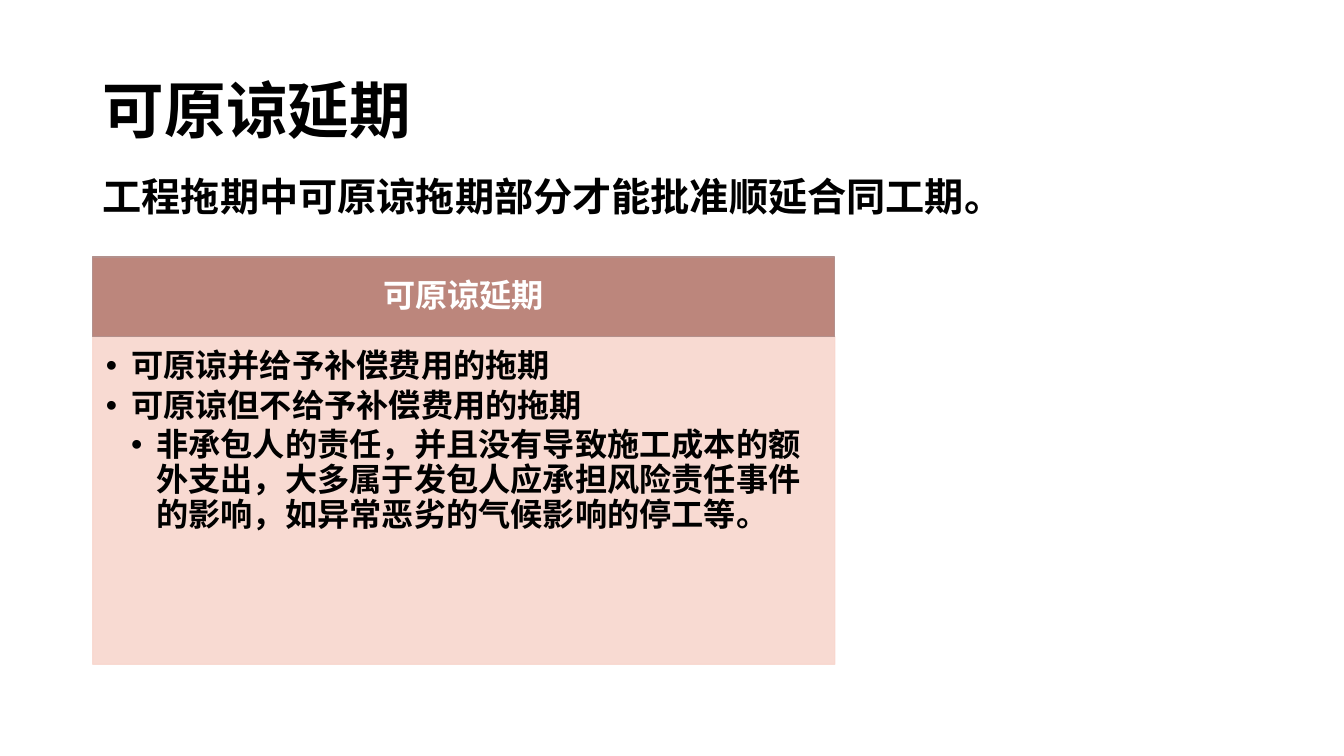
import dataclasses

import lxml.etree
import pptx
import pptx.dml.color
import pptx.enum.shapes
import pptx.enum.text
import pptx.oxml.ns
import pptx.util

Inches, Pt = pptx.util.Inches, pptx.util.Pt
ALIGN, ANCHOR = pptx.enum.text.PP_ALIGN, pptx.enum.text.MSO_ANCHOR
qn = pptx.oxml.ns.qn
LATIN, CJK = "Times New Roman", "Noto Sans CJK SC"
LEFT, PANEL_W = 0.92, 7.36
HEAD_TOP, HEAD_H, LIST_H = 2.55, 0.79, 3.25


@dataclasses.dataclass
class Item:
    text: str
    level: int


ITEMS = [
    Item("可原谅并给予补偿费用的拖期", 0),
    Item("可原谅但不给予补偿费用的拖期", 0),
    Item("非承包人的责任，并且没有导致施工成本的额外支出，大多属于发包人应承担风险责任事件的影响，"
         "如异常恶劣的气候影响的停工等。", 1),
]


def rgb(value: str) -> pptx.dml.color.RGBColor:
    return pptx.dml.color.RGBColor.from_string(value)


def place(sp, left: float, top: float, width: float, height: float) -> None:
    sp.left, sp.top = Inches(left), Inches(top)
    sp.width, sp.height = Inches(width), Inches(height)


def paint(sp, fill: str, line: str, alpha: int = 100) -> None:
    sp.fill.solid()
    sp.fill.fore_color.rgb = rgb(fill)
    sp.line.color.rgb = rgb(line)
    sp.line.width = Pt(1)
    if alpha < 100:
        for color in sp._element.spPr.iter(qn("a:srgbClr")):
            lxml.etree.SubElement(color, qn("a:alpha"), val=str(alpha * 1000))


def frame(sp, anchor, insets: tuple[float, ...], wrap: bool = True):
    tf = sp.text_frame
    tf.word_wrap = wrap
    tf.auto_size = pptx.enum.text.MSO_AUTO_SIZE.NONE
    tf.vertical_anchor = anchor
    tf.margin_left, tf.margin_top, tf.margin_right, tf.margin_bottom = map(Inches, insets)
    return tf


def write(p, text: str, size: float, color: str = "000000", font: str = LATIN,
          align=ALIGN.LEFT, spacing: float = 0.9, after: float = 0) -> None:
    p.alignment, p.line_spacing = align, spacing
    p.space_before, p.space_after = Pt(0), Pt(after)
    r = p.add_run()
    r.text = text
    r.font.size, r.font.bold, r.font.name = Pt(size), True, font
    r.font.color.rgb = rgb(color)
    lxml.etree.SubElement(r._r.get_or_add_rPr(), qn("a:ea"), typeface=CJK)


def bullet(p, level: int) -> None:
    p.level = level
    pPr = p._p.get_or_add_pPr()
    pPr.set("marL", str(Inches(0.25 * (level + 1))))
    pPr.set("indent", str(Inches(-0.25)))
    lxml.etree.SubElement(pPr, qn("a:buFont"), typeface="Arial")
    lxml.etree.SubElement(pPr, qn("a:buChar"), char="•")


def main() -> None:
    prs = pptx.Presentation()
    prs.slide_width, prs.slide_height = Inches(13.33), Inches(7.5)
    s = prs.slides.add_slide(prs.slide_layouts[1])

    # Title
    title = s.shapes.title
    place(title, LEFT, 0.4, 11.5, 1.45)
    tf = frame(title, ANCHOR.MIDDLE, (0.1, 0.05, 0.1, 0.05))
    write(tf.paragraphs[0], "可原谅延期", 44)

    # Panel header
    head = s.shapes.add_shape(pptx.enum.shapes.MSO_SHAPE.RECTANGLE, Inches(LEFT),
                              Inches(HEAD_TOP), Inches(PANEL_W), Inches(HEAD_H))
    head.shadow.inherit = False
    paint(head, "BC867C", "B3908C")
    tf = frame(head, ANCHOR.MIDDLE, (0.18, 0.1, 0.18, 0.1))
    write(tf.paragraphs[0], "可原谅延期", 23, "FFFFFF", align=ALIGN.CENTER)

    # Panel list
    body = s.placeholders[1]
    place(body, LEFT, HEAD_TOP + HEAD_H, PANEL_W, LIST_H)
    paint(body, "F8D7CE", "F8D7CE", alpha=90)
    tf = frame(body, ANCHOR.TOP, (0.13, 0.13, 0.18, 0.2))
    for i, item in enumerate(ITEMS):
        p = tf.add_paragraph() if i else tf.paragraphs[0]
        write(p, item.text, 23, after=3.45)
        bullet(p, item.level)

    # Statement under the title
    note = s.shapes.add_textbox(Inches(LEFT), Inches(1.66), Inches(9.23), Inches(0.57))
    tf = frame(note, ANCHOR.TOP, (0.1, 0.05, 0.1, 0.05), wrap=False)
    write(tf.paragraphs[0], "工程拖期中可原谅拖期部分才能批准顺延合同工期。", 28, font=CJK, spacing=1)

    prs.save("out.pptx")


if __name__ == "__main__":
    main()
